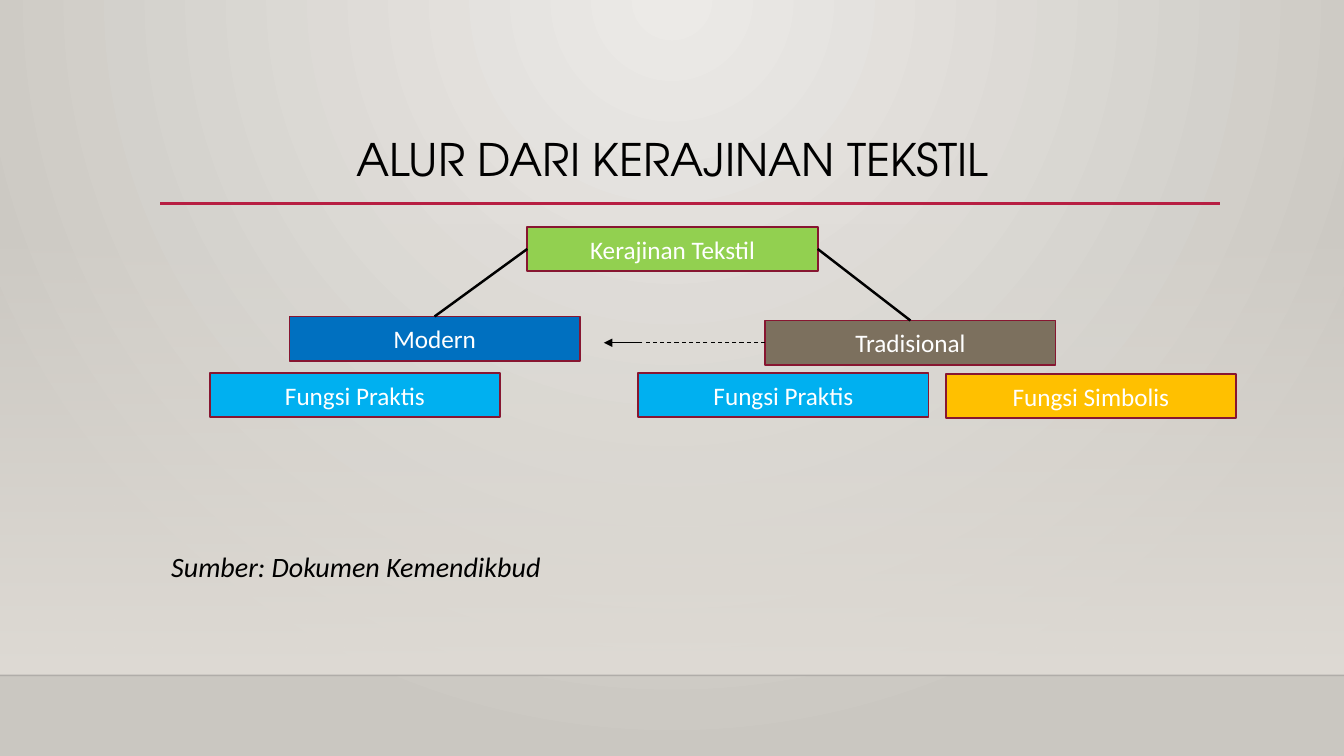
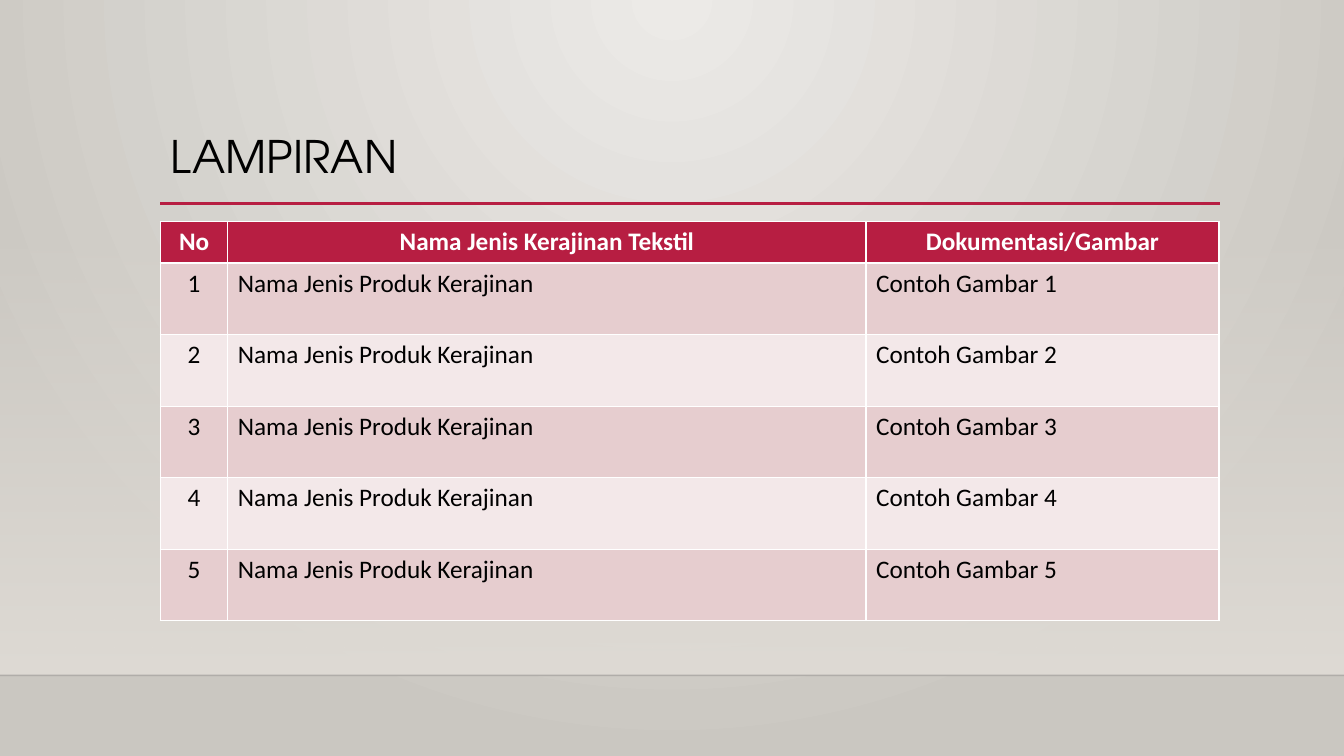
import lxml.etree
import pptx
import pptx.dml.color
import pptx.enum.dml
import pptx.enum.shapes
import pptx.enum.text
import pptx.oxml.ns
import pptx.util

SCALE = 9144
WIDE, HIGH = 1333, 750
FLOOR = 670
RED, WINE, WHITE, BLACK = "B71E42", "871631", "FFFFFF", "000000"
BODY, HEAD = "Calibri", "TeX Gyre Adventor"
ALIGN = pptx.enum.text.PP_ALIGN
ANCHOR = pptx.enum.text.MSO_ANCHOR
RECT = pptx.enum.shapes.MSO_SHAPE.RECTANGLE
STRAIGHT = pptx.enum.shapes.MSO_CONNECTOR.STRAIGHT
DASH = pptx.enum.dml.MSO_LINE.DASH


def px(*nums):
    """Turn px lengths into EMU."""
    return [pptx.util.Emu(num * SCALE) for num in nums]


def rgb(code):
    """Turn a hex string into a colour."""
    return pptx.dml.color.RGBColor.from_string(code)


def node(home, tag, **attrs):
    """Append a drawing element to its home."""
    return lxml.etree.SubElement(home, pptx.oxml.ns.qn("a:" + tag), **attrs)


def find(home, tag):
    """Find the first drawing element with a tag."""
    return next(home.iter(pptx.oxml.ns.qn("a:" + tag)))


def style(frame, size, color, font=BODY, align=ALIGN.LEFT, bold=False, italic=False):
    """Format every paragraph and run of a text frame."""
    for para in frame.paragraphs:
        para.alignment = align
        for run in para.runs:
            face = run.font
            face.name, face.size = font, pptx.util.Pt(size)
            face.bold, face.italic = bold, italic
            face.color.rgb = rgb(color)


def blend(fill, first, last):
    """Set a gradient of two colours."""
    fill.gradient()
    for stop, code in zip(fill.gradient_stops, (first, last)):
        stop.color.rgb = rgb(code)


def wire(slide, start, end, color=BLACK, width=1.75):
    """Draw a line between points or (shape, side) joins."""
    line = slide.shapes.add_connector(STRAIGHT, 0, 0, 0, 0)
    if isinstance(start[0], int):
        line.begin_x, line.begin_y = px(*start)
    else:
        line.begin_connect(*start)
    if isinstance(end[0], int):
        line.end_x, line.end_y = px(*end)
    else:
        line.end_connect(*end)
    line.line.color.rgb = rgb(color)
    line.line.width = pptx.util.Pt(width)
    node(line.element.spPr, "effectLst")
    return line


def backdrop(slide):
    """Give the slide's layout its background, band and rules."""
    layout = slide.slide_layout
    blend(layout.background.fill, "ECEAE7", "CAC7C1")
    grad = find(layout.element, "gradFill")
    grad.remove(find(grad, "lin"))
    ring = node(grad, "path", path="circle")
    node(ring, "fillToRect", l="43000", t="0", r="43000", b="100000")

    band = slide.shapes.add_shape(RECT, *px(0, 221, WIDE, FLOOR - 221))
    band.shadow.inherit = False
    band.line.fill.background()
    blend(band.fill, "DFDBD5", "DFDBD5")
    band.fill.gradient_angle = 270
    node(find(band.element, "srgbClr"), "alpha", val="0")

    edge = wire(slide, (0, FLOOR), (WIDE, FLOOR), "000001", 1)
    node(find(edge.element, "srgbClr"), "alpha", val="20000")
    rule = wire(slide, (159, 202), (1210, 202), RED, 2.5)
    for part in (band, edge, rule):
        layout.shapes.element.append(part.element)


def heading(slide, text, left, top, align=ALIGN.LEFT):
    """Place and format the slide title."""
    title = slide.shapes.title
    title.left, title.top, title.width, title.height = px(left, top, 1050, 115)
    frame = title.text_frame
    frame.text = text
    frame.auto_size = pptx.enum.text.MSO_AUTO_SIZE.NONE
    frame.vertical_anchor = ANCHOR.TOP
    frame.paragraphs[0].line_spacing = 0.9
    style(frame, 32, BLACK, HEAD, align)


def box(slide, text, left, top, color):
    """Draw one labelled box of the chart."""
    shape = slide.shapes.add_shape(RECT, *px(left, top, 288, 44))
    shape.shadow.inherit = False
    shape.fill.solid()
    shape.fill.fore_color.rgb = rgb(color)
    shape.line.color.rgb = rgb(WINE)
    shape.line.width = pptx.util.Pt(1.25)
    shape.text_frame.text = text
    shape.text_frame.vertical_anchor = ANCHOR.MIDDLE
    style(shape.text_frame, 18, WHITE, align=ALIGN.CENTER)
    return shape


def tree(slide, left, top):
    """Draw the flow of textile crafts from its top left corner."""
    root, old, new, *_ = [
        box(slide, text, left + x, top + y, color)
        for text, x, y, color in (
            ("Kerajinan Tekstil", 315, 0, "92D050"),
            ("Tradisional", 551, 93, "7C705E"),
            ("Modern", 79, 89, "0070C0"),
            ("Fungsi Praktis", 0, 145, "00B0F0"),
            ("Fungsi Praktis", 425, 145, "00B0F0"),
            ("Fungsi Simbolis", 730, 146, "FFC000"),
        )
    ]
    wire(slide, (root, 1), (new, 0))
    wire(slide, (root, 3), (old, 0))
    bend = (left + 425, top + 115)
    wire(slide, (old, 1), bend, width=0.75).line.dash_style = DASH
    arrow = wire(slide, bend, (left + 391, top + 115), width=0.75)
    node(find(arrow.element, "ln"), "tailEnd", type="triangle")


def source(slide, text, left, top):
    """Write the source line."""
    note = slide.shapes.add_textbox(*px(left, top, 1050, 44))
    note.text_frame.word_wrap = True
    note.text_frame.text = text
    style(note.text_frame, 20, BLACK, italic=True)


def grid(slide, rows, left, top):
    """Place the table of craft samples."""
    cols, head, step = (67, 633, 350), 41, 71
    size = px(left, top, sum(cols), head + step * (len(rows) - 1))
    table = slide.shapes.add_table(len(rows), len(cols), *size).table
    for col, width in zip(table.columns, px(*cols)):
        col.width = width
    for i, row in enumerate(rows):
        table.rows[i].height = px(step if i else head)[0]
        for j, text in enumerate(row):
            cell = table.cell(i, j)
            cell.fill.solid()
            shade = ("F3E8E9", "E6CDCF")[i % 2] if i else RED
            cell.fill.fore_color.rgb = rgb(shade)
            cell.text_frame.text = text
            align = ALIGN.LEFT if i and j else ALIGN.CENTER
            style(cell.text_frame, 18, BLACK if i else WHITE, align=align, bold=not i)


def main():
    """Build and save the deck."""
    deck = pptx.Presentation()
    deck.slide_width, deck.slide_height = px(WIDE, HIGH)
    layout = deck.slide_layouts[5]

    flow = deck.slides.add_slide(layout)
    backdrop(flow)
    heading(flow, "ALUR DARI KERAJINAN TEKSTIL", 142, 132, ALIGN.CENTER)
    source(flow, "Sumber: Dokumen Kemendikbud", 160, 540)
    tree(flow, 208, 225)

    annex = deck.slides.add_slide(layout)
    heading(annex, "LAMPIRAN", 159, 129)
    rows = [("No", "Nama Jenis Kerajinan Tekstil", "Dokumentasi/Gambar")]
    rows += [
        (str(n), "Nama Jenis Produk Kerajinan", f"Contoh Gambar {n}")
        for n in range(1, 6)
    ]
    grid(annex, rows, 159, 220)
    deck.save("out.pptx")


if __name__ == "__main__":
    main()
